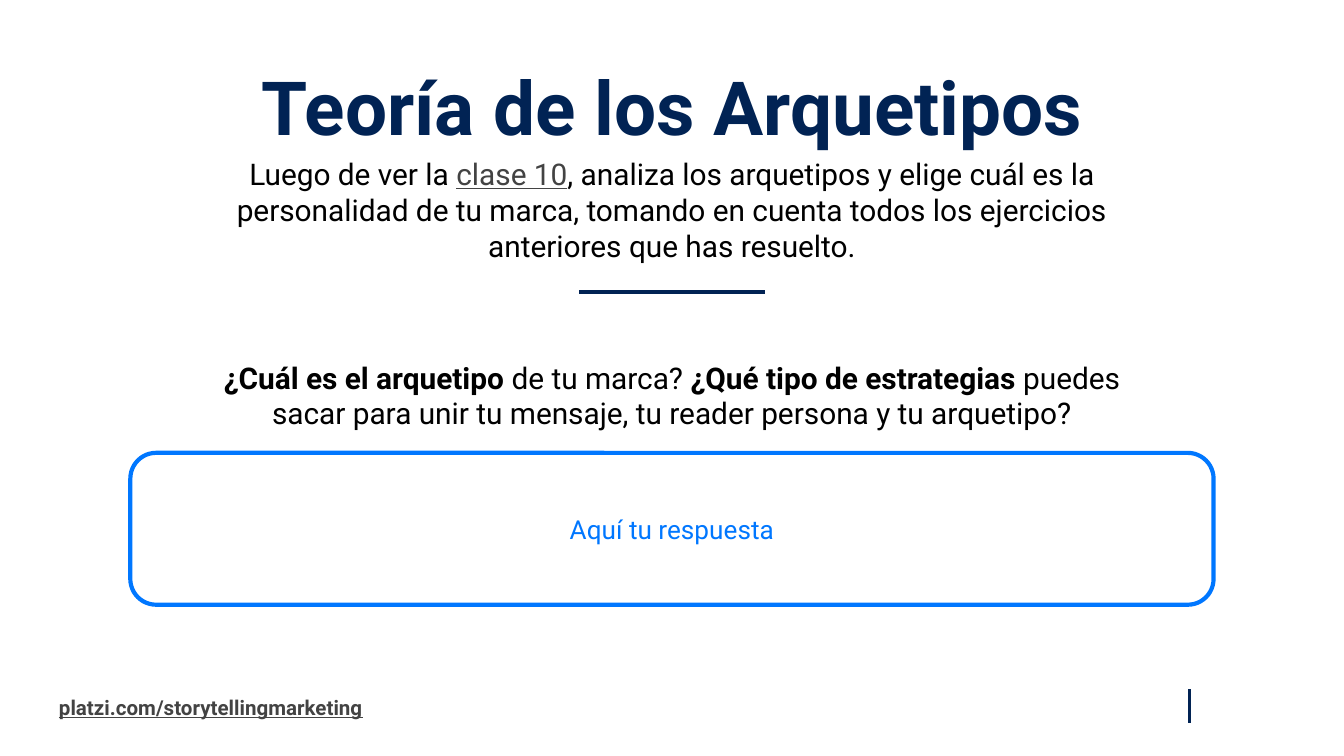
from lxml import etree
from pptx import Presentation
from pptx.dml.color import RGBColor
from pptx.enum.shapes import MSO_CONNECTOR, MSO_SHAPE
from pptx.enum.text import MSO_ANCHOR, MSO_AUTO_SIZE, PP_ALIGN
from pptx.oxml.ns import qn
from pptx.util import Inches, Pt

NAVY, BLUE, GRAY, BLACK = "012354", "0077FF", "434343", "000000"


def rgb(value):
    return RGBColor.from_string(value)


def write(sp, paragraphs, size, align=PP_ALIGN.CENTER, anchor=MSO_ANCHOR.MIDDLE):
    tf = sp.text_frame
    tf.word_wrap = True
    tf.auto_size = MSO_AUTO_SIZE.NONE
    tf.vertical_anchor = anchor
    tf.margin_left = tf.margin_right = tf.margin_top = tf.margin_bottom = Inches(0.1)
    for i, runs in enumerate(paragraphs):
        p = tf.add_paragraph() if i else tf.paragraphs[0]
        p.alignment = align
        for text, color, bold, underline in runs:
            r = p.add_run()
            r.text = text
            r.font.name = "Roboto"
            r.font.size = Pt(size)
            r.font.bold = bold
            r.font.underline = underline
            r.font.color.rgb = rgb(color)


prs = Presentation()
prs.slide_width = Inches(10)
prs.slide_height = Inches(10) * 9 // 16
s = prs.slides.add_slide(prs.slide_layouts[5])
s.background.fill.solid()
s.background.fill.fore_color.rgb = rgb("FFFFFF")

title = s.shapes.title
title.left, title.top = Inches(0.34), Inches(0.48)
title.width, title.height = Inches(9.32), Inches(0.63)
write(title, [[("Teoría de los Arquetipos", NAVY, True, False)]], 40, anchor=MSO_ANCHOR.TOP)
title.text_frame.paragraphs[0].line_spacing = 0.8

intro = [
    [("Luego de ver la ", BLACK, False, False),
     ("clase 10", GRAY, False, True),
     (", analiza los arquetipos y elige cuál es la", BLACK, False, False)],
    [("personalidad de tu marca, tomando en cuenta todos los ejercicios", BLACK, False, False)],
    [("anteriores que has resuelto.", BLACK, False, False)],
]
question = [
    [("¿Cuál es el arquetipo ", BLACK, True, False),
     ("de tu marca? ", BLACK, False, False),
     ("¿Qué tipo de estrategias", BLACK, True, False),
     (" puedes sacar para unir tu mensaje, tu reader persona y tu arquetipo?", BLACK, False, False)],
]
for top, paragraphs in [(1.13, intro), (2.51, question)]:
    sp = s.shapes.add_textbox(Inches(1.32), Inches(top), Inches(7.36), Inches(0.86))
    write(sp, paragraphs, 16)

answer = s.shapes.add_shape(
    MSO_SHAPE.ROUNDED_RECTANGLE, Inches(0.97), Inches(3.37), Inches(8.06), Inches(1.13))
answer.adjustments[0] = 0.17
answer.shadow.inherit = False
answer.fill.background()
answer.line.color.rgb = rgb(BLUE)
answer.line.width = Pt(2.25)
write(answer, [[("Aquí tu respuesta", BLUE, False, False)]], 14)

footer = s.shapes.add_textbox(Inches(0.34), Inches(5.09), Inches(3.11), Inches(0.34))
write(footer, [[("platzi.com/storytellingmarketing", GRAY, True, True)]], 11, PP_ALIGN.LEFT)

for x1, y1, x2, y2, width in [(4.31, 2.17, 5.69, 2.17, 2.25), (8.85, 5.13, 8.85, 5.38, 1.5)]:
    rule = s.shapes.add_connector(
        MSO_CONNECTOR.STRAIGHT, Inches(x1), Inches(y1), Inches(x2), Inches(y2))
    rule.line.color.rgb = rgb(NAVY)
    rule.line.width = Pt(width)
    etree.SubElement(rule._element.spPr, qn("a:effectLst"))

prs.save("out.pptx")
